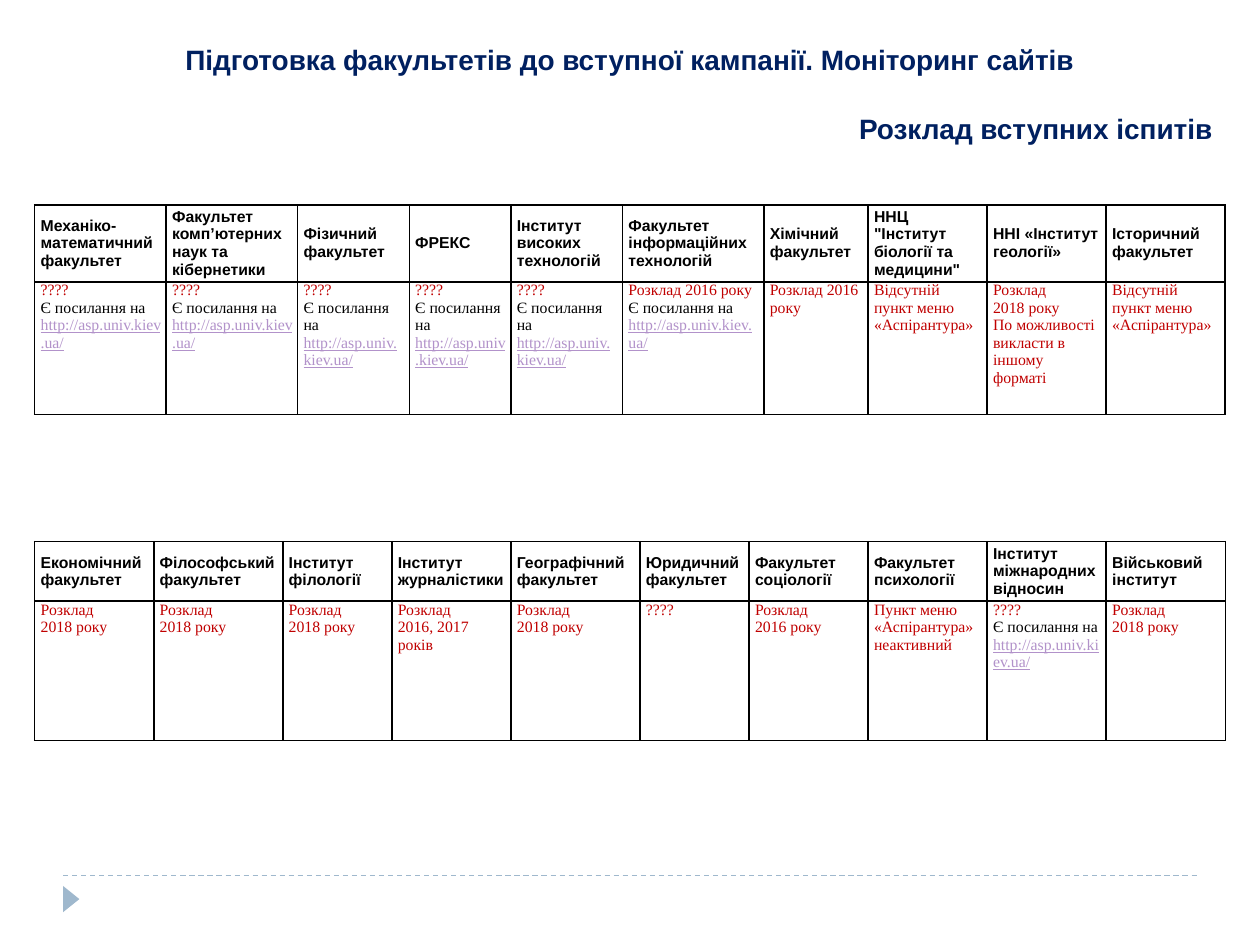
from dataclasses import dataclass
from lxml.etree import SubElement
from pptx import Presentation
from pptx.dml.color import RGBColor as RGB
from pptx.enum.dml import MSO_LINE as Dash
from pptx.enum.shapes import MSO_CONNECTOR as Link, MSO_SHAPE as Shape
from pptx.enum.text import MSO_ANCHOR as Anchor, MSO_AUTO_SIZE as Fit, PP_ALIGN as Align
from pptx.oxml import parse_xml
from pptx.oxml.ns import nsdecls, qn
from pptx.util import Cm, Pt


@dataclass(frozen=True)
class Theme:
    head: str = "Arial"
    body: str = "Times New Roman"
    big: int = 16
    small: int = 9
    navy: RGB = RGB(0x00, 0x20, 0x60)
    black: RGB = RGB(0, 0, 0)
    red: RGB = RGB(0xC0, 0, 0)
    lilac: RGB = RGB(0xB2, 0x92, 0xCA)
    steel: RGB = RGB(0x9F, 0xB8, 0xCD)
    rule: str = "000000"


T = Theme()
SITE = "http://asp.univ.kiev.ua/"
NOTE = "Є посилання на " + SITE
ASK = "????\n" + NOTE
NONE = "Відсутній пункт меню «Аспірантура»"
DONE = "Розклад\n2018 року"

# Each column: width in cm, faculty, state of its site
FIRST = [
    (2.65, "Механіко-математичний факультет", ASK),
    (2.65, "Факультет комп’ютерних наук та кібернетики", ASK),
    (2.25, "Фізичний факультет", ASK),
    (2.05, "ФРЕКС", ASK),
    (2.25, "Інститут високих технологій", ASK),
    (2.85, "Факультет інформаційних технологій", "Розклад 2016 року\n" + NOTE),
    (2.1, "Хімічний факультет", "Розклад 2016 року"),
    (2.4, 'ННЦ "Інститут біології та медицини"', NONE),
    (2.4, "ННІ «Інститут геології»", DONE + "\nПо можливості викласти в іншому форматі"),
    (2.4, "Історичний факультет", NONE),
]
SECOND = [
    (2.4, "Економічний факультет", DONE),
    (2.6, "Філософський факультет", DONE),
    (2.2, "Інститут\nфілології", DONE),
    (2.4, "Інститут журналістики", "Розклад\n2016, 2017 років"),
    (2.6, "Географічний факультет", DONE),
    (2.2, "Юридичний факультет", "????"),
    (2.4, "Факультет соціології", "Розклад\n2016 року"),
    (2.4, "Факультет психології", "Пункт меню «Аспірантура» неактивний"),
    (2.4, "Інститут міжнародних відносин", ASK),
    (2.4, "Військовий інститут", DONE),
]


def style(font, name, size, color, bold=False):
    font.name, font.size, font.bold = name, Pt(size), bold
    font.color.rgb = color


def add_title(slide, x, y, w, h):
    title = slide.shapes.title
    title.left, title.top, title.width, title.height = map(Cm, (x, y, w, h))
    frame = title.text_frame
    frame.auto_size, frame.word_wrap = Fit.NONE, True
    frame.vertical_anchor = Anchor.TOP
    frame.text = ("Підготовка факультетів до вступної кампанії. Моніторинг сайтів\n"
                  "Розклад вступних іспитів")
    for par, align, gap in zip(frame.paragraphs, (Align.CENTER, Align.RIGHT), (0, 20)):
        par.alignment, par.space_before = align, Pt(gap)
        style(par.font, T.head, T.big, T.navy, True)


def set_edges(cell):
    props = cell._tc.get_or_add_tcPr()
    for i, side in enumerate("LRTB"):
        props.insert(i, parse_xml(
            f'<a:ln{side} {nsdecls("a")} w="{Pt(1)}"><a:solidFill>'
            f'<a:srgbClr val="{T.rule}"/></a:solidFill></a:ln{side}>'))


def fill_cell(cell, text, head):
    cell.margin_left = cell.margin_right = Cm(0.12)
    cell.margin_top = cell.margin_bottom = 0
    cell.vertical_anchor = Anchor.MIDDLE if head else Anchor.TOP
    cell.fill.background()
    set_edges(cell)
    cell.text = text
    for par in cell.text_frame.paragraphs:
        if head:
            style(par.font, T.head, T.small, T.black, True)
        elif SITE in par.text:
            # Black lead-in, then the underlined address
            style(par.font, T.body, T.small, T.black)
            par.runs[0].text = par.text.replace(SITE, "")
            site = par.add_run()
            site.text = SITE
            site.font.underline = True
            site.font.color.rgb = T.lilac
        else:
            style(par.font, T.body, T.small, T.red)


def add_grid(slide, data, x, y, w, rows):
    grid = slide.shapes.add_table(
        2, len(data), Cm(x), Cm(y), Cm(w), Cm(sum(rows))).table
    grid.first_row = grid.horz_banding = False
    for row, high in zip(grid.rows, rows):
        row.height = Cm(high)
    for i, (wide, name, state) in enumerate(data):
        grid.columns[i].width = Cm(wide)
        fill_cell(grid.cell(0, i), name, True)
        fill_cell(grid.cell(1, i), state, False)


def add_foot(slide, x, y, w):
    # Dashed rule
    line = slide.shapes.add_connector(Link.STRAIGHT, Cm(x), Cm(y), Cm(x + w), Cm(y))
    line.line.color.rgb, line.line.width = T.steel, Pt(0.75)
    line.line.dash_style = Dash.DASH
    SubElement(line._element.spPr, qn("a:effectLst"))
    # Marker that points right
    mark = slide.shapes.add_shape(
        Shape.ISOSCELES_TRIANGLE, Cm(x - 0.1), Cm(y + 0.31), Cm(0.53), Cm(0.33))
    mark.rotation = 90
    mark.shadow.inherit = False
    mark.fill.solid()
    mark.fill.fore_color.rgb = T.steel
    mark.line.fill.background()


def main():
    deck = Presentation()
    deck.slide_width, deck.slide_height = Cm(25.4), Cm(19.05)
    slide = deck.slides.add_slide(deck.slide_layouts[5])
    left, wide = 0.7, 24
    add_foot(slide, 1.27, 17.65, 22.86)
    add_title(slide, left, 0.74, wide, 2.3)
    add_grid(slide, FIRST, left, 4.13, wide, (1.55, 2.68))
    add_grid(slide, SECOND, left, 10.92, wide, (1.2, 2.81))
    deck.save("out.pptx")


if __name__ == "__main__":
    main()
